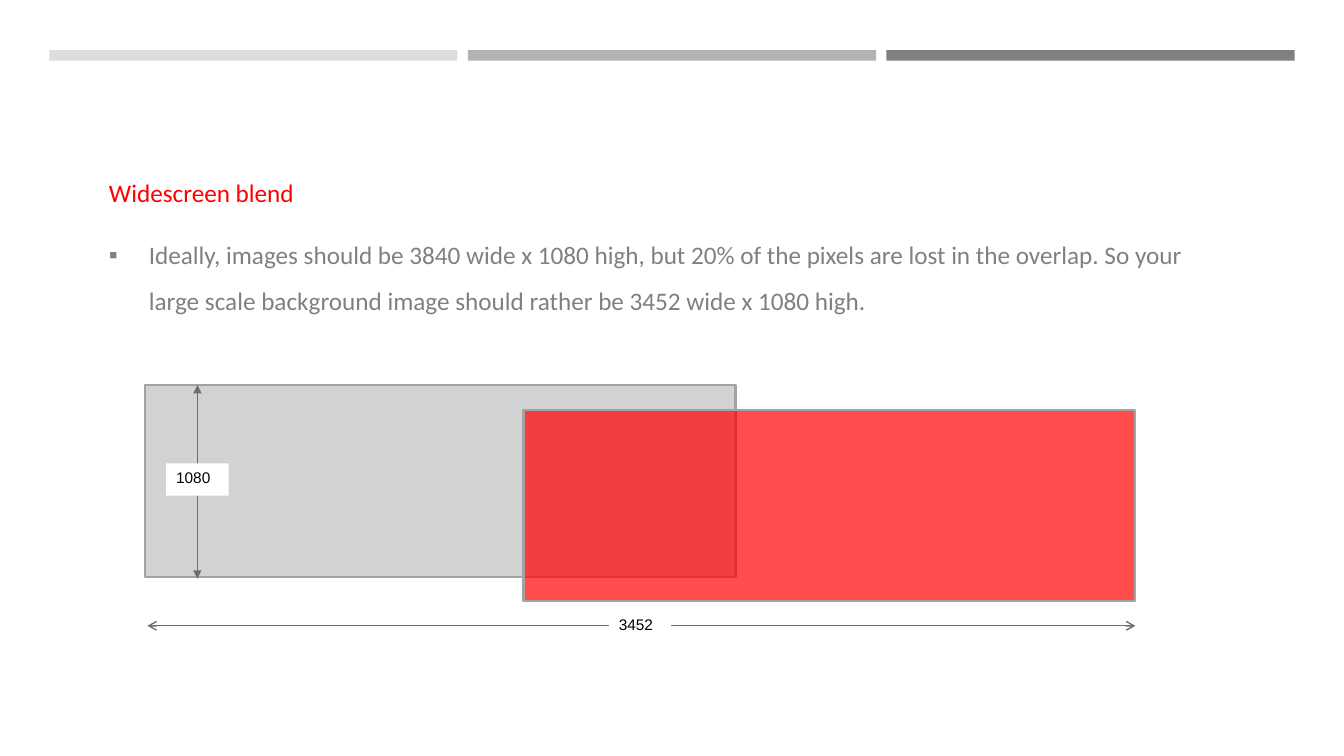
import pptx
import pptx.dml.color
import pptx.enum.shapes
import pptx.enum.text
import pptx.oxml
import pptx.oxml.ns
import pptx.util

Pt = pptx.util.Pt
RGBColor = pptx.dml.color.RGBColor

RED = RGBColor(0xFF, 0x00, 0x00)
BLACK = RGBColor(0x00, 0x00, 0x00)
WHITE = RGBColor(0xFF, 0xFF, 0xFF)
TEXT_GREY = RGBColor(0x80, 0x80, 0x80)
SCREEN_GREY = RGBColor(0xBF, 0xBF, 0xBF)
OUTLINE_GREY = RGBColor(0xA3, 0xA3, 0xA3)
ARROW_GREY = RGBColor(0x6E, 0x6E, 0x6E)
BAR_COLOURS = [RGBColor(0xDD, 0xDD, 0xDD), RGBColor(0xB2, 0xB2, 0xB2), TEXT_GREY]

HEADING = "Widescreen blend"
ADVICE = ("Ideally, images should be 3840 wide x 1080 high, but 20% of the pixels "
          "are lost in the overlap. So your large scale background image should "
          "rather be 3452 wide x 1080 high.")


def add_element(parent, tag, **attributes):
    element = pptx.oxml.parse_xml(f"<a:{tag} {pptx.oxml.ns.nsdecls('a')}/>")
    for name, value in attributes.items():
        element.set(name, str(value))
    parent.append(element)


def add_rectangle(shapes, left, top, width, height, colour):
    box = shapes.add_shape(pptx.enum.shapes.MSO_SHAPE.RECTANGLE,
                           Pt(left), Pt(top), Pt(width), Pt(height))
    box.shadow.inherit = False
    box.fill.solid()
    box.fill.fore_color.rgb = colour
    box.line.fill.background()
    return box


def add_screen(shapes, left, top, width, height, colour):
    """Add an outlined projection area at 70% opacity."""
    screen = add_rectangle(shapes, left, top, width, height, colour)
    colour_element = screen.fill._xPr.find(".//" + pptx.oxml.ns.qn("a:srgbClr"))
    add_element(colour_element, "alpha", val=70000)
    screen.line.color.rgb = OUTLINE_GREY
    screen.line.width = Pt(1.75)


def add_dimension(shapes, start, end, head, label, label_left, label_top):
    """Add a double-headed arrow with a white label over it."""
    arrow = shapes.add_connector(pptx.enum.shapes.MSO_CONNECTOR.STRAIGHT,
                                 *map(Pt, start + end))
    arrow.line.color.rgb = ARROW_GREY
    arrow.line.width = Pt(1)
    line = arrow.line._get_or_add_ln()
    for tag in ("headEnd", "tailEnd"):
        add_element(line, tag, type=head)
    add_element(arrow._element.spPr, "effectLst")

    box = add_rectangle(shapes, label_left, label_top, 44.6, 23, WHITE)
    frame = box.text_frame
    frame.text = label
    frame.vertical_anchor = pptx.enum.text.MSO_ANCHOR.TOP
    para = frame.paragraphs[0]
    para.alignment = pptx.enum.text.PP_ALIGN.LEFT
    para.font.size = Pt(11)
    para.font.name = "Arial"
    para.font.color.rgb = BLACK


def format_paragraph(para, text, colour, indent=0, bullet=None):
    para.text = text
    para.line_spacing = 1.5
    para.space_before = Pt(0)
    para.space_after = Pt(12)
    properties = para._p.get_or_add_pPr()
    properties.set("marL", str(Pt(indent)))
    properties.set("indent", str(Pt(-indent)))
    if bullet:
        add_element(properties, "buChar", char=bullet)
    else:
        add_element(properties, "buNone")
    for span in para.runs:
        span.font.size = Pt(18)
        span.font.name = "Calibri"
        span.font.color.rgb = colour


def fill_body(body):
    body.left, body.top, body.width, body.height = map(Pt, (70.6, 112.3, 810, 117.4))
    frame = body.text_frame
    frame.auto_size = pptx.enum.text.MSO_AUTO_SIZE.NONE
    frame.vertical_anchor = pptx.enum.text.MSO_ANCHOR.TOP
    format_paragraph(frame.paragraphs[0], HEADING, RED)
    format_paragraph(frame.add_paragraph(), ADVICE, TEXT_GREY, indent=28.5, bullet="▪")


def add_top_bars(shapes):
    for index, colour in enumerate(BAR_COLOURS):
        add_rectangle(shapes, 35.2 + index * 299, 35.9, 291.6, 7.5, colour)


def add_blend_diagram(shapes):
    diagram = shapes.add_group_shape().shapes
    add_screen(diagram, 103.5, 275, 422, 137.3, SCREEN_GREY)
    add_screen(diagram, 373.8, 293, 437, 136.5, RED)
    add_dimension(diagram, (105.3, 447), (811, 447), "arrow", "3452", 434.9, 435.6)
    add_dimension(diagram, (141, 275), (141, 413.3), "triangle", "1080", 118.7, 331)


def main():
    deck = pptx.Presentation()
    deck.slide_width, deck.slide_height = Pt(960), Pt(540)
    page = deck.slides.add_slide(deck.slide_layouts[1])
    title = page.shapes.title._element
    title.getparent().remove(title)
    fill_body(page.placeholders[1])
    add_top_bars(page.shapes)
    add_blend_diagram(page.shapes)
    deck.save("out.pptx")


if __name__ == "__main__":
    main()
